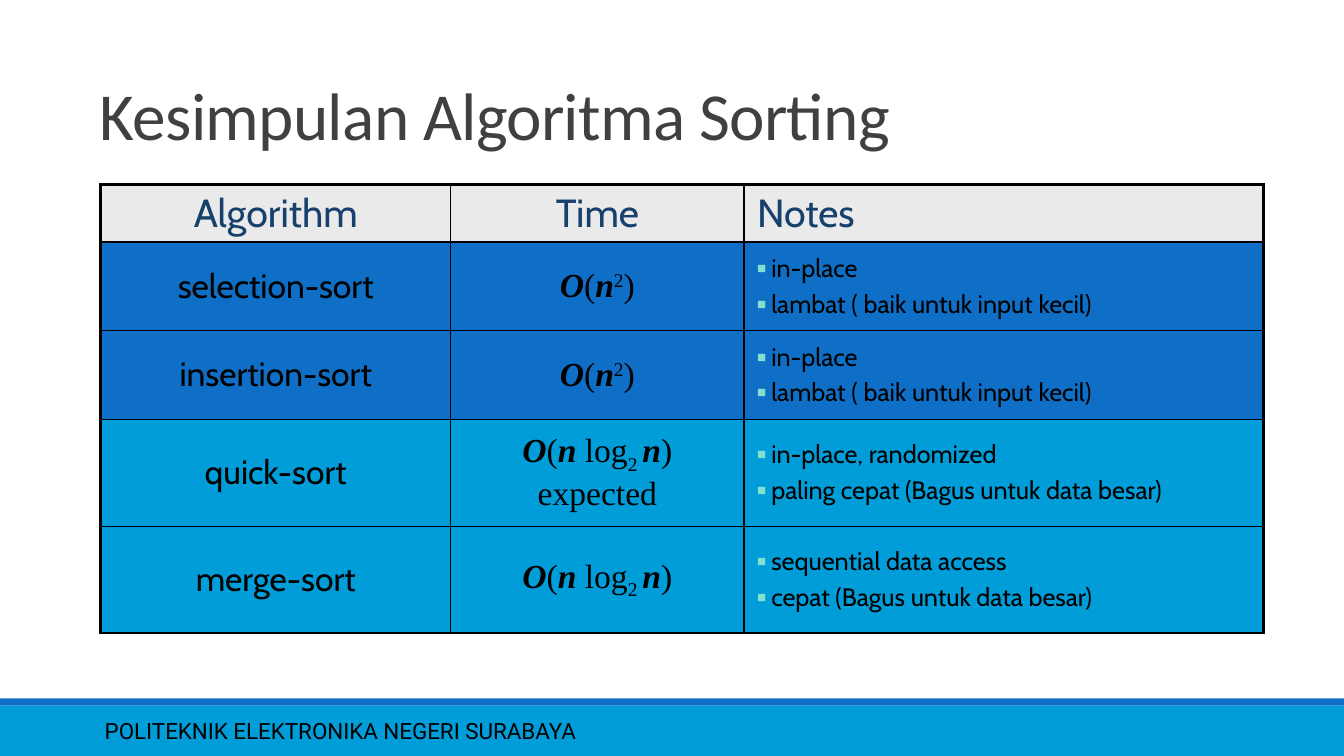
import pptx
import pptx.util
import pptx.dml.color
import pptx.enum.shapes
import pptx.enum.text
import pptx.oxml
import pptx.oxml.ns
from pptx.util import Inches

# Content
TITLE = "Kesimpulan Algoritma Sorting"
FOOTER = "POLITEKNIK ELEKTRONIKA NEGERI SURABAYA"
HEADINGS = ["Algorithm", "Time", "Notes"]
QUADRATIC = [("O", "variable"), ("(", "plain"), ("n", "variable"),
             ("2", "super"), (")", "plain")]
LINEARITHMIC = [("O", "variable"), ("(", "plain"), ("n", "variable"),
                (" log", "plain"), ("2 ", "sub"), ("n", "variable"), (")", "plain")]
EXPECTED = LINEARITHMIC + [("\n", "break"), ("expected", "plain")]
ALGORITHMS = [
    ("selection-sort", QUADRATIC, ["in-place", "lambat ( baik untuk input kecil)"], "slow"),
    ("insertion-sort", QUADRATIC, ["in-place", "lambat ( baik untuk input kecil)"], "slow"),
    ("quick-sort", EXPECTED,
     ["in-place, randomized", "paling cepat (Bagus untuk data besar)"], "fast"),
    ("merge-sort", LINEARITHMIC,
     ["sequential data access", "cepat (Bagus untuk data besar)"], "fast"),
]

# Look and layout
THEME = {
    "title": ("Calibri", 48, "404040"),
    "heading": ("Cabin", 28, "17406D"),
    "name": ("Cabin", 24, "000000"),
    "time": ("Times New Roman", 24, "000000"),
    "note": ("Cabin", 18, "000000"),
    "footer": ("Roboto", 16, "000000"),
    "slow": "0F6FC6", "fast": "009DD9", "header": "EAEAEA",
    "bullet": "85DFD0", "border": "000000",
    "thick": 2.25, "thin": 1,
}
COLUMN_WIDTHS = [3.47, 2.91, 5.15]
ROW_HEIGHTS = [0.57, 0.88, 0.88, 1.06, 1.06]
BASELINES = {"super": "30000", "sub": "-25000"}
CENTER = pptx.enum.text.PP_ALIGN.CENTER
LEFT = pptx.enum.text.PP_ALIGN.LEFT
MIDDLE = pptx.enum.text.MSO_ANCHOR.MIDDLE


def rgb(color):
    return pptx.dml.color.RGBColor.from_string(color)


def style(paragraph, role, align=LEFT):
    family, size, color = THEME[role]
    paragraph.alignment = align
    font = paragraph.font
    font.name, font.size = family, pptx.util.Pt(size)
    font.color.rgb = rgb(color)


def add_bullet(paragraph):
    properties = paragraph._p.get_or_add_pPr()
    properties.set("marL", str(Inches(0.14)))
    properties.set("indent", str(-Inches(0.14)))
    ns = pptx.oxml.ns.nsdecls("a")
    for xml in (f'<a:buClr {ns}><a:srgbClr val="{THEME["bullet"]}"/></a:buClr>',
                f'<a:buSzPct {ns} val="60000"/>',
                f'<a:buFont {ns} typeface="Arial"/>',
                f'<a:buChar {ns} char="■"/>'):
        properties.append(pptx.oxml.parse_xml(xml))


def write_formula(paragraph, parts):
    for text, kind in parts:
        if kind == "break":
            paragraph.add_line_break()
            continue
        run = paragraph.add_run()
        run.text = text
        if kind == "variable":
            run.font.bold = run.font.italic = True
        elif kind in BASELINES:
            run.font._element.set("baseline", BASELINES[kind])


def write_notes(frame, notes):
    for i, note in enumerate(notes):
        paragraph = frame.paragraphs[0] if i == 0 else frame.add_paragraph()
        paragraph.text = note
        if i:
            paragraph.space_before = pptx.util.Pt(0.2 * THEME["note"][1])
        add_bullet(paragraph)
        style(paragraph, "note")


def format_cell(cell, fill, row, column):
    cell.vertical_anchor = MIDDLE
    cell.margin_left = cell.margin_right = Inches(0.13)
    cell.margin_top = cell.margin_bottom = Inches(0.05)
    cell.fill.solid()
    cell.fill.fore_color.rgb = rgb(THEME[fill])
    # Thick frame and header rule, thin lines inside
    thick = {"L": column == 0, "R": column == len(COLUMN_WIDTHS) - 1,
             "T": row <= 1, "B": row in (0, len(ROW_HEIGHTS) - 1)}
    for i, (side, is_thick) in enumerate(thick.items()):
        width = pptx.util.Pt(THEME["thick" if is_thick else "thin"])
        cell._tc.get_or_add_tcPr().insert(i, pptx.oxml.parse_xml(
            f'<a:ln{side} {pptx.oxml.ns.nsdecls("a")} w="{width}"><a:solidFill>'
            f'<a:srgbClr val="{THEME["border"]}"/></a:solidFill></a:ln{side}>'))


def main():
    deck = pptx.Presentation()
    deck.slide_width, deck.slide_height = Inches(13.33), Inches(7.5)
    slide = deck.slides.add_slide(deck.slide_layouts[5])

    # Footer bands and text
    for top, height, fill in ((7, 0.5, "fast"), (6.93, 0.07, "slow")):
        band = slide.shapes.add_shape(pptx.enum.shapes.MSO_SHAPE.RECTANGLE, 0,
                                      Inches(top), deck.slide_width, Inches(height))
        band.shadow.inherit = False
        band.fill.solid()
        band.fill.fore_color.rgb = rgb(THEME[fill])
        band.line.fill.background()
    footer = slide.shapes.add_textbox(Inches(0.94), Inches(7.05),
                                      Inches(8.41), Inches(0.4)).text_frame
    footer.word_wrap = True
    footer.vertical_anchor = MIDDLE
    footer.text = FOOTER
    style(footer.paragraphs[0], "footer")

    # Title
    title = slide.shapes.title
    title.left, title.top = Inches(0.89), Inches(0.33)
    title.width, title.height = Inches(11.78), Inches(1.25)
    heading = title.text_frame
    heading.text = TITLE
    heading.auto_size = pptx.enum.text.MSO_AUTO_SIZE.NONE
    heading.vertical_anchor = pptx.enum.text.MSO_ANCHOR.BOTTOM
    heading.paragraphs[0].line_spacing = 0.85
    style(heading.paragraphs[0], "title")
    heading.paragraphs[0].runs[0].font._element.set("spc", "-50")

    # Comparison table
    table = slide.shapes.add_table(
        len(ROW_HEIGHTS), len(COLUMN_WIDTHS), Inches(1), Inches(1.83),
        Inches(sum(COLUMN_WIDTHS)), Inches(sum(ROW_HEIGHTS))).table
    table.first_row = table.horz_banding = False
    for column, width in zip(table.columns, COLUMN_WIDTHS):
        column.width = Inches(width)
    for row, height in zip(table.rows, ROW_HEIGHTS):
        row.height = Inches(height)

    for column, label in enumerate(HEADINGS):
        cell = table.cell(0, column)
        cell.text = label
        style(cell.text_frame.paragraphs[0], "heading", LEFT if label == "Notes" else CENTER)
        format_cell(cell, "header", 0, column)

    for row, (name, time, notes, speed) in enumerate(ALGORITHMS, start=1):
        name_cell, time_cell, notes_cell = (table.cell(row, c) for c in range(3))
        name_cell.text = name
        style(name_cell.text_frame.paragraphs[0], "name", CENTER)
        write_formula(time_cell.text_frame.paragraphs[0], time)
        style(time_cell.text_frame.paragraphs[0], "time", CENTER)
        write_notes(notes_cell.text_frame, notes)
        for column, cell in enumerate((name_cell, time_cell, notes_cell)):
            format_cell(cell, speed, row, column)

    deck.save("out.pptx")


if __name__ == "__main__":
    main()
